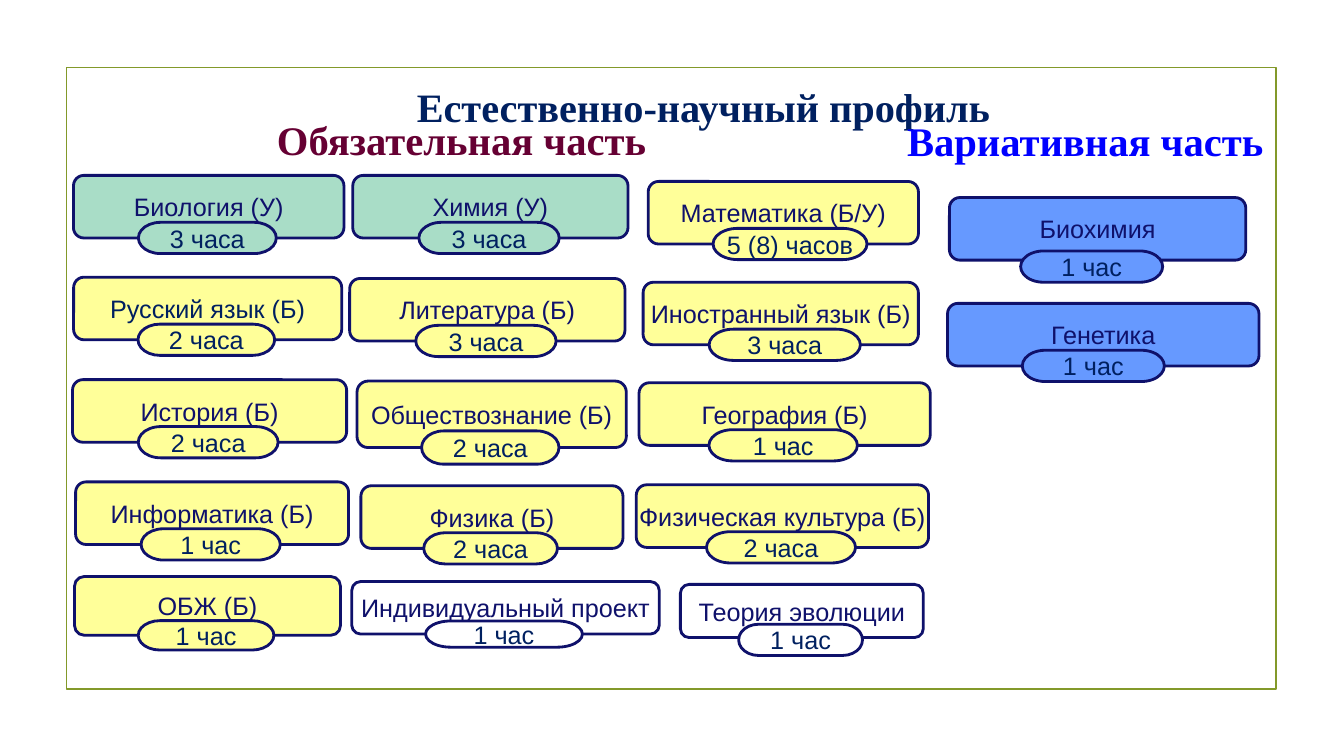
from pptx import Presentation
from pptx.dml.color import RGBColor
from pptx.enum.shapes import MSO_SHAPE as Shape
from pptx.enum.text import MSO_ANCHOR as Anchor, MSO_AUTO_SIZE as AutoSize, PP_ALIGN as Align
from pptx.util import Pt

COLORS = {
    "frame": "83992A", "outline": "0F116B", "navy": "002060",
    "maroon": "660033", "blue": "0000FF",
    "advanced": "A9DDC7", "basic": "FFFF99", "elective": "6699FF", "extra": "FFFFFF",
}
CARD_HEIGHT = 44.7

# Kind, subject, hours, left, top, width, then any departures from the usual card
SUBJECTS = [
    ("advanced", "Биология (У)", "3 часа", 52.5, 125.3, 193.2, {}),
    ("advanced", "Химия (У)", "3 часа", 252, 125.3, 196.6, {}),
    ("basic", "Математика (Б/У)", "5 (8) часов", 463, 129.6, 193, {"pill_width": 110}),
    ("basic", "Русский язык (Б)", "2 часа", 52.6, 198, 191.5, {"label_color": "navy"}),
    ("basic", "Литература (Б)", "3 часа", 249.8, 198.9, 196.6, {}),
    ("basic", "Иностранный язык (Б)", "3 часа", 459.4, 201.6, 196.6, {"pill_width": 108}),
    ("basic", "История (Б)", "2 часа", 51.8, 271.2, 195.8, {}),
    ("basic", "Обществознание (Б)", "2 часа", 255, 272.2, 192.4, {"height": 47.5}),
    ("basic", "География (Б)", "1 час", 456.5, 273.4, 208, {}),
    ("basic", "Информатика (Б)", "1 час", 54, 344.2, 195, {}),
    ("basic", "Физика (Б)", "2 часа", 257.8, 347, 187.2, {}),
    ("basic", "Физическая культура (Б)", "2 часа", 454.5, 346.3, 208.8, {}),
    ("basic", "ОБЖ (Б)", "1 час", 53.2, 411.8, 190, {"height": 42}),
    ("extra", "Индивидуальный проект", "1 час", 251.3, 415.4, 219.6, {"height": 37.5}),
    ("extra", "Теория эволюции", "1 час", 486, 417.4, 173.5,
     {"height": 38, "pill_height": 22.3}),
    ("elective", "Биохимия", "1 час", 678.2, 141.1, 211.7,
     {"pill_width": 101.5, "pill_drop": 38.2}),
    ("elective", "Генетика", "1 час", 676.8, 216.7, 222.5, {"pill_width": 101.5}),
]


def color(name):
    return RGBColor.from_string(COLORS[name])


def write(shape, text, *, size=18, font="Arial", ink="outline", bold=False,
          align=Align.CENTER, anchor=Anchor.MIDDLE, wrap=False):
    frame = shape.text_frame
    frame.word_wrap = wrap
    frame.auto_size = AutoSize.NONE
    frame.vertical_anchor = anchor
    para = frame.paragraphs[0]
    para.alignment = align
    span = para.add_run()
    span.text = text
    span.font.size = Pt(size)
    span.font.name = font
    span.font.bold = bold
    span.font.color.rgb = color(ink)


def add_box(shapes, preset, place, *, fill=None, line="outline", weight=2):
    box = shapes.add_shape(preset, *map(Pt, place))
    box.shadow.inherit = False
    if fill:
        box.fill.solid()
        box.fill.fore_color.rgb = color(fill)
    else:
        box.fill.background()
    box.line.color.rgb = color(line)
    box.line.width = Pt(weight)
    return box


def add_card(page, kind, subject, hours, left, top, width, *, height=CARD_HEIGHT,
             pill_width=None, pill_height=None, pill_drop=None, label_color="outline"):
    """Draw a subject box with its hours in a pill over the lower edge."""
    shapes = page.shapes.add_group_shape().shapes
    card = add_box(shapes, Shape.FLOWCHART_ALTERNATE_PROCESS,
                   (left, top, width, height), fill=kind)
    write(card, subject, ink=label_color)
    pill_place = (left + 0.24 * width, top + (pill_drop or 0.75 * height),
                  pill_width or 0.51 * width, pill_height or 0.5 * height)
    pill = add_box(shapes, Shape.FLOWCHART_TERMINATOR, pill_place, fill=kind)
    write(pill, hours, ink="navy")


def add_title(page, text):
    title = page.shapes.title
    title.left, title.top, title.width, title.height = map(Pt, (166.3, 66.6, 672.5, 19.4))
    write(title, text, size=28.8, font="Times New Roman", ink="navy", bold=True, wrap=True)


def add_heading(page, text, place, ink):
    box = page.shapes.add_textbox(*map(Pt, place))
    write(box, text, size=29, font="Times New Roman", ink=ink, bold=True,
          align=Align.LEFT, anchor=Anchor.TOP, wrap=True)


def main():
    deck = Presentation()
    deck.slide_width, deck.slide_height = Pt(960), Pt(540)
    page = deck.slides.add_slide(deck.slide_layouts[5])
    add_box(page.shapes, Shape.RECTANGLE, (47.5, 48.2, 864, 444.2),
            line="frame", weight=1.25)
    add_title(page, "Естественно-научный профиль")
    add_heading(page, "Обязательная часть", (190.8, 78.5, 280.8, 42.5), "maroon")
    add_heading(page, "Вариативная часть", (640.8, 79.2, 280.1, 43.9), "blue")
    for *details, changes in SUBJECTS:
        add_card(page, *details, **changes)
    deck.save("out.pptx")


if __name__ == "__main__":
    main()
